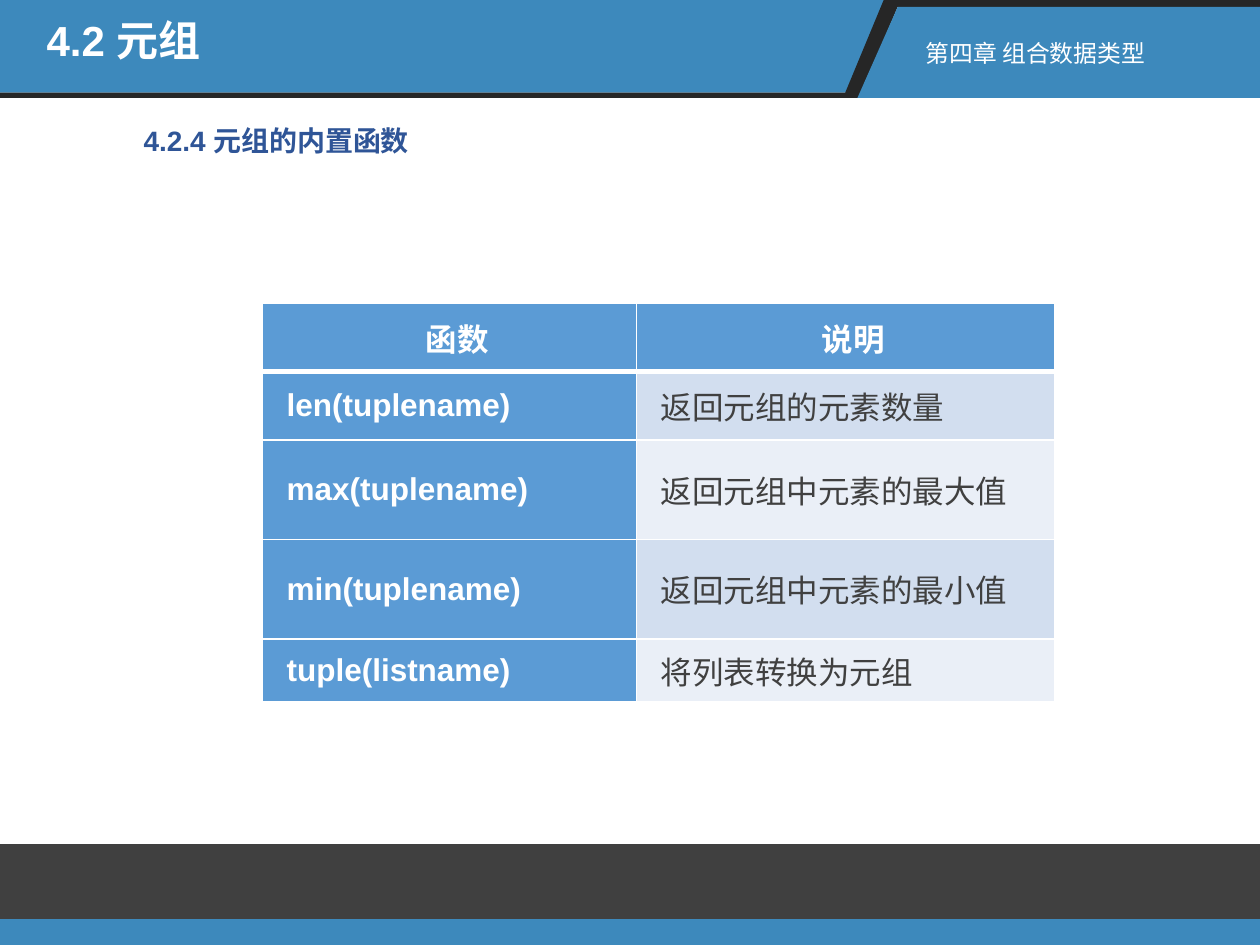
from lxml import etree
from pptx import Presentation
from pptx.dml.color import RGBColor
from pptx.enum.shapes import MSO_SHAPE
from pptx.enum.text import MSO_ANCHOR, MSO_AUTO_SIZE, PP_ALIGN
from pptx.oxml.ns import qn
from pptx.util import Pt

RECT = MSO_SHAPE.RECTANGLE
TOP, MID = MSO_ANCHOR.TOP, MSO_ANCHOR.MIDDLE
NONE, GROW = MSO_AUTO_SIZE.NONE, MSO_AUTO_SIZE.SHAPE_TO_FIT_TEXT
LEFT, MIDST, JUST = PP_ALIGN.LEFT, PP_ALIGN.CENTER, PP_ALIGN.JUSTIFY

HEAD = "4.2 元组"
TOPIC = "4.2.4 元组的内置函数"
PART = "第四章 组合数据类型"
ROWS = [
    ("函数", "说明"),
    ("len(tuplename)", "返回元组的元素数量"),
    ("max(tuplename)", "返回元组中元素的最大值"),
    ("min(tuplename)", "返回元组中元素的最小值"),
    ("tuple(listname)", "将列表转换为元组"),
]

THEME = {
    "font": "Arial", "blue": "3D89BC", "black": "262626", "gray": "404040",
    "navy": "2F5597", "white": "FFFFFF", "key": "5B9BD5",
    "bands": ("D2DEEF", "EAEFF7"),
    "head": 24, "topic": 16, "part": 13.6, "cell": 18,
}
WIDE, HIGH = 720, 540
LIP, EDGE, BASE = 3.6, 52.6, 56.2
COLS = (213.8, 239)
TALL = (38.9, 38.9, 56.9, 56.9, 36)
GRID = (149.8, 173.5)

BANDS = [
    ("blue", [(0, 0), (507.6, 0), (485.3, EDGE), (0, EDGE)]),
    ("black", [(505.4, 0), (WIDE, 0), (WIDE, LIP), (513.4, LIP), (491, BASE),
               (0, BASE), (0, EDGE), (483.1, EDGE)]),
    ("blue", [(513.4, LIP), (WIDE, LIP), (WIDE, BASE), (490.3, BASE)]),
]
FEET = [("gray", 482.4, 42.8), ("blue", 525.2, 14.8)]


def apply(item, vals):
    for name, val in vals.items():
        setattr(item, name, val)


def tint(code):
    return RGBColor.from_string(THEME.get(code, code))


def paint(item, code):
    item.fill.solid()
    item.fill.fore_color.rgb = tint(code)


def flat(shape, code):
    paint(shape, code)
    shape.line.fill.background()
    shape.shadow.inherit = False


def write(frame, text, size, code, bold=False, **form):
    par = frame.paragraphs[0]
    run = par.add_run()
    run.text = text
    apply(run.font, {"name": THEME["font"], "size": Pt(THEME[size]), "bold": bold})
    run.font.color.rgb = tint(code)
    apply(par, form)
    return par


def place(shape, box):
    names = ("left", "top", "width", "height")
    apply(shape, {name: Pt(val) for name, val in zip(names, box)})


def edge(cell, side, width):
    line = etree.SubElement(cell._tc.get_or_add_tcPr(), qn("a:" + side), w=str(Pt(width)))
    fill = etree.SubElement(line, qn("a:solidFill"))
    etree.SubElement(fill, qn("a:srgbClr"), val=THEME["white"])


def bars(slide):
    for code, dots in BANDS:
        pen = slide.shapes.build_freeform(*dots[0], scale=float(Pt(1)))
        pen.add_line_segments(dots[1:], close=True)
        flat(pen.convert_to_shape(), code)
    for code, top, tall in FEET:
        flat(slide.shapes.add_shape(RECT, 0, Pt(top), Pt(WIDE), Pt(tall)), code)


def titles(slide):
    title, body = slide.shapes.title, slide.placeholders[1]
    for shape, box, text, size, code in (
        (title, (19.4, 7.9, 293.8, 44.6), HEAD, "head", "white"),
        (body, (74.9, 69.1, 252.7, 43.2), TOPIC, "topic", "navy"),
    ):
        place(shape, box)
        frame = shape.text_frame
        apply(frame, {"auto_size": NONE, "vertical_anchor": TOP, "word_wrap": True})
        par = write(frame, text, size, code, True, alignment=LEFT,
                    line_spacing=0.9, space_before=Pt(10))
        props = par._p.get_or_add_pPr()
        apply_xml = {"marL": "0", "indent": "0"}
        for name, val in apply_xml.items():
            props.set(name, val)
        etree.SubElement(props, qn("a:buNone"))
        slide.shapes._spTree.append(shape._element)


def chapter(slide):
    box = slide.shapes.add_textbox(Pt(522), Pt(18.7), Pt(140.4), Pt(23.8))
    apply(box.text_frame, {"word_wrap": False, "auto_size": GROW})
    write(box.text_frame, PART, "part", "white")


def grid(slide):
    table = slide.shapes.add_table(len(ROWS), len(COLS), Pt(GRID[0]), Pt(GRID[1]),
                                   Pt(sum(COLS)), Pt(sum(TALL))).table
    for col, width in zip(table.columns, COLS):
        col.width = Pt(width)
    for r, (texts, tall) in enumerate(zip(ROWS, TALL)):
        table.rows[r].height = Pt(tall)
        for c, text in enumerate(texts):
            cell = table.cell(r, c)
            key = r == 0 or c == 0
            apply(cell, {"vertical_anchor": MID, "margin_left": Pt(5),
                         "margin_right": Pt(5), "margin_top": 0, "margin_bottom": 0})
            par = write(cell.text_frame, text, "cell", "white" if key else "gray",
                        key, alignment=JUST if r else MIDST)
            par._p.get_or_add_pPr().set("marL", str(Pt(9)))
            for side in ("lnL", "lnR", "lnT", "lnB"):
                thick = (r, side) in ((0, "lnB"), (1, "lnT"))
                edge(cell, side, 3 if thick else 1)
            paint(cell, "key" if key else THEME["bands"][(r - 1) % 2])


def main():
    deck = Presentation()
    apply(deck, {"slide_width": Pt(WIDE), "slide_height": Pt(HIGH)})
    slide = deck.slides.add_slide(deck.slide_layouts[1])
    bars(slide)
    titles(slide)
    grid(slide)
    chapter(slide)
    deck.save("out.pptx")


if __name__ == "__main__":
    main()
